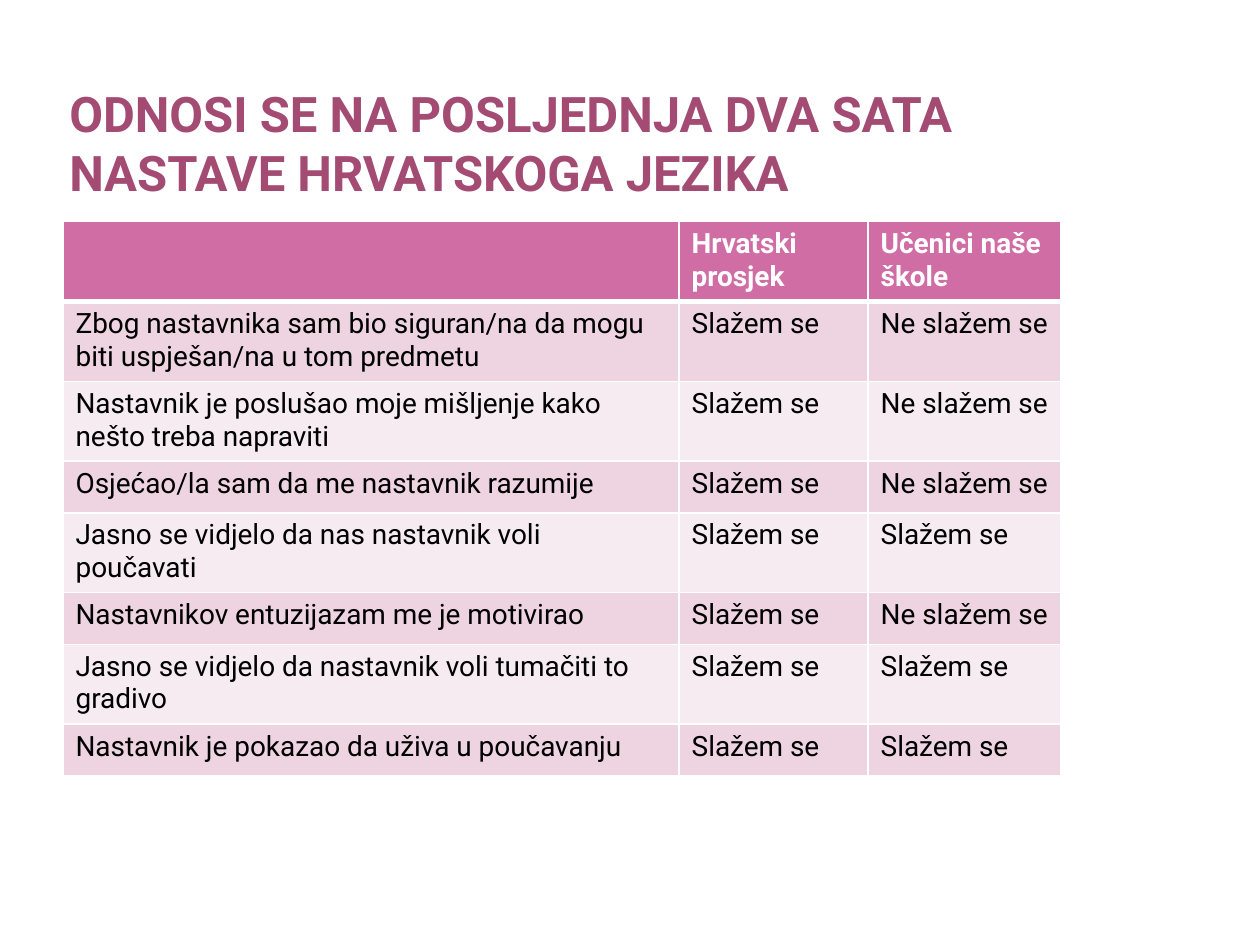
from typing import NamedTuple

from lxml.etree import SubElement
from pptx import Presentation
from pptx.dml.color import RGBColor
from pptx.enum.text import MSO_ANCHOR as Anchor
from pptx.oxml.ns import qn
from pptx.util import Inches, Pt

FONT = "Roboto"
PLUM = RGBColor(0xA3, 0x4B, 0x73)
PINK = RGBColor(0xCF, 0x6D, 0xA4)
ROSE = RGBColor(0xED, 0xD4, 0xE0)
BLUSH = RGBColor(0xF6, 0xEB, 0xF0)
WHITE = RGBColor(0xFF, 0xFF, 0xFF)
BLACK = RGBColor(0, 0, 0)

AGREE = "Slažem se"
DISAGREE = "Ne slažem se"
TITLE = "ODNOSI SE NA POSLJEDNJA DVA SATA NASTAVE HRVATSKOGA JEZIKA"
COL_WIDTHS = (4.89, 1.5, 1.53)
ROW_HEIGHT = 0.41


class Row(NamedTuple):
    statement: str
    average: str
    school: str


HEADER = Row("", "Hrvatski prosjek", "Učenici naše škole")
ANSWERS = [
    Row("Zbog nastavnika sam bio siguran/na da mogu biti uspješan/na u tom predmetu",
        AGREE, DISAGREE),
    Row("Nastavnik je poslušao moje mišljenje kako nešto treba napraviti", AGREE, DISAGREE),
    Row("Osjećao/la sam da me nastavnik razumije", AGREE, DISAGREE),
    Row("Jasno se vidjelo da nas nastavnik voli poučavati", AGREE, AGREE),
    Row("Nastavnikov entuzijazam me je motivirao", AGREE, DISAGREE),
    Row("Jasno se vidjelo da nastavnik voli tumačiti to gradivo", AGREE, AGREE),
    Row("Nastavnik je pokazao da uživa u poučavanju", AGREE, AGREE),
]


def write(tf, text: str, *, size: float, color: RGBColor, bold: bool = False) -> None:
    p = tf.paragraphs[0]
    p.font.size = Pt(size)
    if not text:
        return
    r = p.add_run()
    r.text = text
    r.font.name = FONT
    r.font.size = Pt(size)
    r.font.bold = bold
    r.font.color.rgb = color


def add_borders(cell, **widths: float) -> None:
    tc_pr = cell._tc.get_or_add_tcPr()
    for side, width in widths.items():
        ln = SubElement(tc_pr, qn(f"a:ln{side}"), w=str(Pt(width)))
        fill = SubElement(ln, qn("a:solidFill"))
        SubElement(fill, qn("a:srgbClr"), val=str(WHITE))


def add_title(s) -> None:
    tf = s.shapes.add_textbox(Inches(0.5), Inches(0.35), Inches(7.92), Inches(1.25)).text_frame
    tf.word_wrap = True
    tf.vertical_anchor = Anchor.BOTTOM
    tf.margin_left = tf.margin_right = Inches(0.05)
    tf.margin_top = tf.margin_bottom = 0
    write(tf, TITLE, size=28, color=PLUM, bold=True)


def add_answers(s, rows: list[Row]) -> None:
    frame = s.shapes.add_table(len(rows), len(COL_WIDTHS), Inches(0.5), Inches(1.76),
                               Inches(sum(COL_WIDTHS)), Inches(4.38))
    table = frame.table
    for col, width in zip(table.columns, COL_WIDTHS):
        col.width = Inches(width)
    for i, row in enumerate(rows):
        table.rows[i].height = Inches(ROW_HEIGHT)
        is_header = i == 0
        fill = PINK if is_header else (ROSE if i % 2 else BLUSH)
        for j, text in enumerate(row):
            cell = table.cell(i, j)
            add_borders(cell, L=1, R=1, T=3 if i == 1 else 1, B=3 if is_header else 1)
            cell.fill.solid()
            cell.fill.fore_color.rgb = fill
            write(cell.text_frame, text, size=16,
                  color=WHITE if is_header else BLACK, bold=is_header)
    frame.height = Inches(4.38)


def main() -> None:
    prs = Presentation()
    prs.slide_width, prs.slide_height = Inches(10), Inches(7.5)
    s = prs.slides.add_slide(prs.slide_layouts[6])
    add_title(s)
    add_answers(s, [HEADER, *ANSWERS])
    prs.save("out.pptx")


if __name__ == "__main__":
    main()
